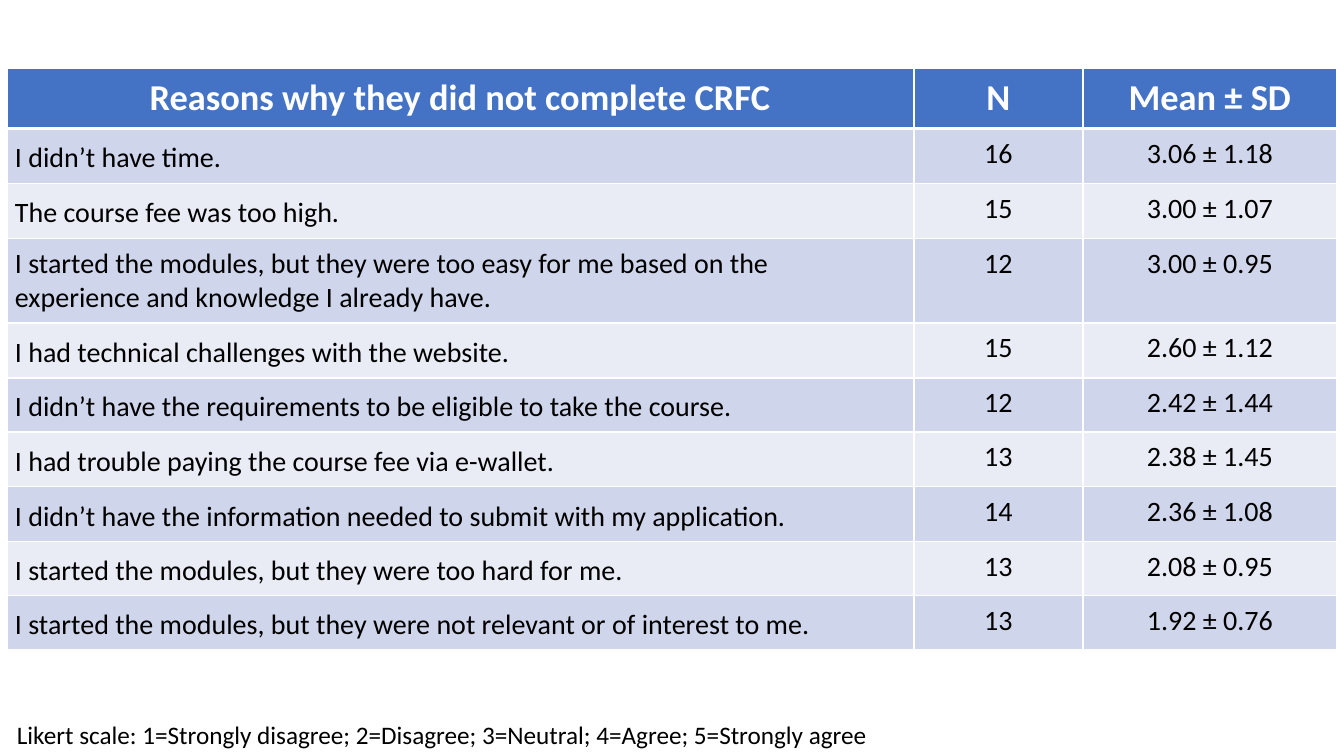
from pptx import Presentation
from pptx.dml.color import RGBColor
from pptx.enum.text import MSO_ANCHOR, PP_ALIGN
from pptx.oxml import parse_xml
from pptx.oxml.ns import nsdecls
from pptx.util import Emu, Pt

BLUE = RGBColor(0x44, 0x72, 0xC4)
DARK = RGBColor(0xCF, 0xD5, 0xEA)
LIGHT = RGBColor(0xE9, 0xEB, 0xF5)
WHITE = RGBColor(0xFF, 0xFF, 0xFF)
BLACK = RGBColor(0, 0, 0)


def px(n):
    return Emu(n * 9144000 // 1008)


def add_run(para, text, size, color, bold=False):
    run = para.add_run()
    run.text = text
    font = run.font
    font.name, font.size, font.bold = "Calibri", Pt(size), bold
    font.color.rgb = color


deck = Presentation()
deck.slide_width, deck.slide_height = px(1344), px(756)
slide = deck.slides.add_slide(deck.slide_layouts[6])

# Survey answers
rows = [
    ("Reasons why they did not complete CRFC", "N", "Mean ± SD"),
    ("I didn’t have time.", "16", "3.06 ± 1.18"),
    ("The course fee was too high.", "15", "3.00 ± 1.07"),
    ("I started the modules, but they were too easy for me based on the\n"
     "experience and knowledge I already have.", "12", "3.00 ± 0.95"),
    ("I had technical challenges with the website.", "15", "2.60 ± 1.12"),
    ("I didn’t have the requirements to be eligible to take the course.",
     "12", "2.42 ± 1.44"),
    ("I had trouble paying the course fee via e-wallet.", "13", "2.38 ± 1.45"),
    ("I didn’t have the information needed to submit with my application.",
     "14", "2.36 ± 1.08"),
    ("I started the modules, but they were too hard for me.",
     "13", "2.08 ± 0.95"),
    ("I started the modules, but they were not relevant or of interest to me.",
     "13", "1.92 ± 0.76"),
]
widths = [907, 169, 254]
edges = [68, 127, 182, 237, 321, 376, 430, 485, 540, 594, 648]

# Table frame
frame = slide.shapes.add_table(len(rows), len(widths), px(7), px(edges[0]),
                               px(sum(widths)), px(edges[-1] - edges[0]))
table = frame.table
table.horz_banding = False
for col, width in zip(table.columns, widths):
    col.width = px(width)

# Cells
for r, row in enumerate(rows):
    table.rows[r].height = px(edges[r + 1] - edges[r])
    head = r == 0
    for c, text in enumerate(row):
        cell = table.cell(r, c)
        cell.margin_left = cell.margin_right = px(8)
        cell.margin_top = cell.margin_bottom = px(8)
        if head:
            cell.vertical_anchor = MSO_ANCHOR.MIDDLE
        else:
            cell.vertical_anchor = MSO_ANCHOR.TOP if c else MSO_ANCHOR.BOTTOM

        para = cell.text_frame.paragraphs[0]
        para.alignment = PP_ALIGN.CENTER if head or c else PP_ALIGN.LEFT
        for i, line in enumerate(text.split("\n")):
            if i:
                para.add_line_break()
            add_run(para, line, 26 if head else 20,
                    WHITE if head else BLACK, head)

        # White borders, thicker under the header
        props = cell._tc.get_or_add_tcPr()
        for side in "LRTB":
            thick = (head and side == "B") or (r == 1 and side == "T")
            props.append(parse_xml(
                f'<a:ln{side} {nsdecls("a")} w="{Pt(3 if thick else 1)}">'
                f'<a:solidFill><a:srgbClr val="{WHITE}"/></a:solidFill>'
                f'</a:ln{side}>'))
        cell.fill.solid()
        cell.fill.fore_color.rgb = BLUE if head else DARK if r % 2 else LIGHT

# Scale note
note = slide.shapes.add_textbox(px(7), px(714), px(1252), px(40))
note.text_frame.word_wrap = True
add_run(note.text_frame.paragraphs[0],
        "Likert scale: 1=Strongly disagree; 2=Disagree; 3=Neutral; "
        "4=Agree; 5=Strongly agree", 18, BLACK)

deck.save("out.pptx")
